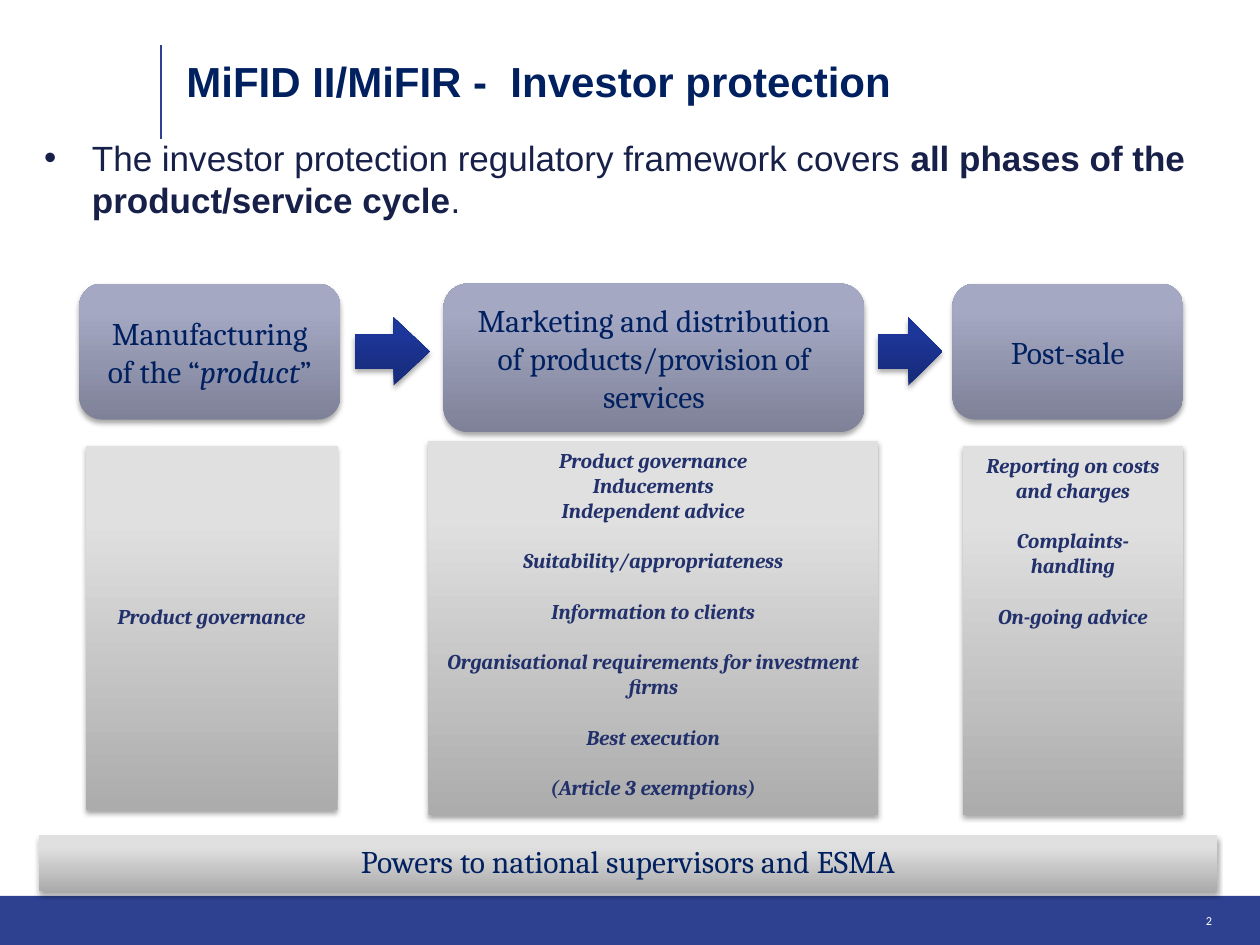
import copy

import lxml.etree
import pptx
import pptx.dml.color
import pptx.enum.shapes
import pptx.enum.text
import pptx.oxml.ns
import pptx.util

Inches = pptx.util.Inches
Pt = pptx.util.Pt
RGBColor = pptx.dml.color.RGBColor
Shape = pptx.enum.shapes.MSO_SHAPE
Align = pptx.enum.text.PP_ALIGN
Anchor = pptx.enum.text.MSO_ANCHOR
qn = pptx.oxml.ns.qn

WHITE = RGBColor(0xFF, 0xFF, 0xFF)
BRAND_BLUE = RGBColor(0x2D, 0x41, 0x90)
NAVY = RGBColor(0x00, 0x20, 0x60)
BODY_BLUE = RGBColor(0x17, 0x20, 0x48)
TOPIC_BLUE = RGBColor(0x22, 0x31, 0x6C)

PHASE_FILL = (RGBColor(0x7E, 0x81, 0x97), RGBColor(0xA4, 0xA8, 0xC3), RGBColor(0xA4, 0xA8, 0xC5))
GREY_FILL = (RGBColor(0xAC, 0xAC, 0xAC), RGBColor(0xE0, 0xE0, 0xE0), RGBColor(0xE1, 0xE1, 0xE1))
ARROW_FILL = (RGBColor(0x16, 0x2A, 0x77), RGBColor(0x1D, 0x36, 0x9A), RGBColor(0x1B, 0x35, 0x9D))
STOP_POSITIONS = (0, 0.8, 1)

NUMBER_FONT = {"name": "Calibri", "size": Pt(7), "color": WHITE}
TITLE_FONT = {"name": "Arial", "size": Pt(24), "bold": True, "color": NAVY}
BODY_FONT = {"name": "Arial", "size": Pt(20), "color": BODY_BLUE}
PHASE_FONT = {"name": "Cambria", "size": Pt(18), "color": NAVY}
TOPIC_FONT = {"name": "Cambria", "size": Pt(12), "bold": True, "italic": True, "color": TOPIC_BLUE}

TOPIC_LINE = 14.4

PHASES = [
    ((0.63, 2.25, 2.07, 1.08), [("Manufacturing of the “", {}), ("product", {"italic": True}), ("”", {})]),
    ((3.52, 2.25, 3.34, 1.18), [("Marketing and distribution of products/provision of services", {})]),
    ((7.56, 2.25, 1.83, 1.08), [("Post-sale", {})]),
]
TOPICS = [
    ((0.68, 3.54, 2, 2.89), 6, [["Product governance"]]),
    ((3.4, 3.5, 3.57, 2.97), 0, [
        ["Product governance", "Inducements", "Independent advice"],
        ["Suitability/appropriateness"],
        ["Information to clients"],
        ["Organisational requirements for investment firms"],
        ["Best execution"],
        ["(Article 3 exemptions)"],
    ]),
    ((7.64, 3.54, 1.75, 2.93), 0, [
        ["Reporting on costs and charges"],
        ["Complaints- handling"],
        ["On-going advice"],
    ]),
]
ARROWS = [(2.82, 2.52, 0.59, 0.54), (6.97, 2.52, 0.51, 0.54)]


def set_font(font, values):
    for name, value in values.items():
        if name == "color":
            font.color.rgb = value
        else:
            setattr(font, name, value)


def write_spans(para, spans, font, align):
    para.alignment = align
    for text, changes in spans:
        span = para.add_run()
        span.text = text
        set_font(span.font, {**font, **changes})


def add_text(page, place, spans, font, align=Align.LEFT):
    box = page.shapes.add_textbox(*map(Inches, place))
    frame = box.text_frame
    frame.word_wrap = True
    for side in ("left", "top", "right", "bottom"):
        setattr(frame, "margin_" + side, 0)
    para = frame.paragraphs[0]
    write_spans(para, spans, font, align)
    return para


def add_bullet(para, indent):
    properties = para._p.get_or_add_pPr()
    properties.set("marL", str(Inches(indent)))
    properties.set("indent", str(-Inches(indent)))
    lxml.etree.SubElement(properties, qn("a:buFont"), typeface="Arial")
    lxml.etree.SubElement(properties, qn("a:buChar"), char="•")


def add_shadow(shape):
    effects = shape._element.spPr.find(qn("a:effectLst"))
    shadow = lxml.etree.SubElement(
        effects, qn("a:outerShdw"), blurRad=str(Pt(3.1)), dist=str(Pt(1.8)),
        dir="5400000", rotWithShape="0")
    color = lxml.etree.SubElement(shadow, qn("a:srgbClr"), val="000000")
    lxml.etree.SubElement(color, qn("a:alpha"), val="35000")


def add_block(page, kind, place):
    shape = page.shapes.add_shape(kind, *map(Inches, place))
    shape.shadow.inherit = False
    shape.line.fill.background()
    return shape


def add_gradient_block(page, kind, place, colors):
    shape = add_block(page, kind, place)
    shape.fill.gradient()
    shape.fill.gradient_angle = 90
    stop_list = shape._element.spPr.find(".//" + qn("a:gsLst"))
    stop_list.append(copy.deepcopy(stop_list[-1]))
    for stop, position, color in zip(shape.fill.gradient_stops, STOP_POSITIONS, colors):
        stop.position = position
        stop.color.rgb = color
    add_shadow(shape)
    shape.text_frame.word_wrap = True
    shape.text_frame.vertical_anchor = Anchor.TOP
    return shape


def add_phase(page, place, spans):
    shape = add_gradient_block(page, Shape.ROUNDED_RECTANGLE, place, PHASE_FILL)
    shape.text_frame.vertical_anchor = Anchor.MIDDLE
    write_spans(shape.text_frame.paragraphs[0], spans, PHASE_FONT, Align.CENTER)


def add_topics(page, place, lines_above, groups):
    shape = add_gradient_block(page, Shape.RECTANGLE, place, GREY_FILL)
    frame = shape.text_frame
    frame.margin_top = Inches(0.05) + Pt(lines_above * TOPIC_LINE)
    for group_index, group in enumerate(groups):
        for index, text in enumerate(group):
            first = group_index == index == 0
            para = frame.paragraphs[0] if first else frame.add_paragraph()
            if index == 0 and not first:
                para.space_before = Pt(TOPIC_LINE)
            write_spans(para, [(text, {})], TOPIC_FONT, Align.CENTER)


def add_rule(page, start, end):
    rule = page.shapes.add_connector(
        pptx.enum.shapes.MSO_CONNECTOR.STRAIGHT, *map(Inches, start + end))
    rule.line.color.rgb = BRAND_BLUE
    rule.line.width = Pt(1)
    lxml.etree.SubElement(rule._element.spPr, qn("a:effectLst"))


def main():
    deck = pptx.Presentation()
    deck.slide_width, deck.slide_height = Inches(10), Inches(7.5)
    page = deck.slides.add_slide(deck.slide_layouts[6])

    footer = add_block(page, Shape.RECTANGLE, (0, 7.11, 10, 0.39))
    footer.fill.solid()
    footer.fill.fore_color.rgb = BRAND_BLUE
    add_rule(page, (1.28, 1.1), (1.28, 0.36))
    add_text(page, (8.05, 7.25, 1.57, 0.11), [("2", {})], NUMBER_FONT, Align.RIGHT)
    add_text(page, (1.48, 0.44, 8.17, 0.63),
             [("MiFID II/MiFIR -  Investor protection", {})], TITLE_FONT)
    statement = add_text(page, (0.35, 1.08, 9.27, 6.06), [
        ("The investor protection regulatory framework covers ", {}),
        ("all phases of the product/service cycle", {"bold": True}),
        (".", {}),
    ], BODY_FONT)
    add_bullet(statement, 0.38)

    for place, spans in PHASES:
        add_phase(page, place, spans)
    for place, lines_above, groups in TOPICS:
        add_topics(page, place, lines_above, groups)
    for place in ARROWS:
        arrow = add_gradient_block(page, Shape.RIGHT_ARROW, place, ARROW_FILL)
        arrow.adjustments[1] = 0.53
    powers = add_gradient_block(page, Shape.RECTANGLE, (0.31, 6.63, 9.35, 0.44), GREY_FILL)
    write_spans(powers.text_frame.paragraphs[0],
                [("Powers to national supervisors and ESMA", {})], PHASE_FONT, Align.CENTER)

    deck.save("out.pptx")


if __name__ == "__main__":
    main()
